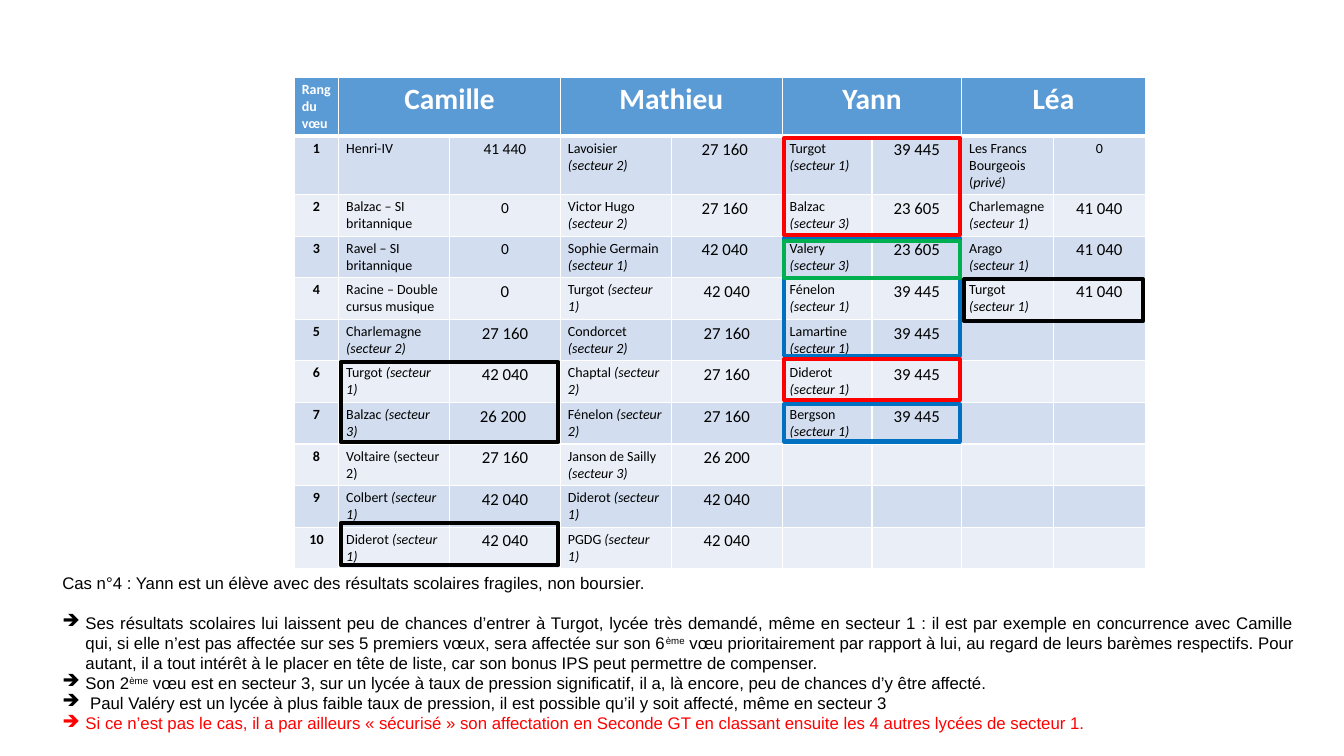
from itertools import accumulate

from pptx import Presentation
from pptx import util as u
from pptx.dml import color
from pptx.enum import shapes, text
from pptx.oxml import parse_xml
from pptx.oxml.ns import nsdecls

COLUMNS = [3.3] + [8.25] * 4 + [6.68] * 2 + [6.83] * 2
HEADER_ROW, ROW = 7.6, 5.47
TABLE_LEFT, TABLE_TOP = 21.9, 10.27
EDGES = list(accumulate(COLUMNS, initial=TABLE_LEFT))

NAMES = ["Camille", "Mathieu", "Yann", "Léa"]
WISHES = [
    ["Henri-IV", "41 440", "Lavoisier |(secteur 2)", "27 160 ", "Turgot |(secteur 1)", "39 445",
     "Les Francs Bourgeois (|privé)", "0"],
    ["Balzac – SI britannique", "0", "Victor Hugo| (secteur 2)", "27 160 ", "Balzac |(secteur 3)", "23 605",
     "Charlemagne |(secteur 1)", "41 040"],
    ["Ravel – SI britannique", "0", "Sophie Germain |(secteur 1)", "42 040 ", "Valery |(secteur 3)", "23 605",
     "Arago |(secteur 1)", "41 040"],
    ["Racine – Double cursus musique", "0", "Turgot |(secteur 1)", "42 040", "Fénelon |(secteur 1)", "39 445",
     "Turgot |(secteur 1)", "41 040"],
    ["Charlemagne |(secteur 2)", "27 160", "Condorcet |(secteur 2)", "27 160", "Lamartine |(secteur 1)", "39 445"],
    ["Turgot |(secteur 1)", "42 040", "Chaptal |(secteur 2)", "27 160", "Diderot |(secteur 1)", "39 445"],
    ["Balzac| (secteur 3)", "26 200 ", "Fénelon |(secteur 2)", "27 160", "Bergson |(secteur 1)", "39 445"],
    ["Voltaire (secteur 2)", "27 160", "Janson de Sailly |(secteur 3)", "26 200"],
    ["Colbert |(secteur 1)", "42 040", "Diderot |(secteur 1)", "42 040"],
    ["Diderot |(secteur 1)", "42 040", "PGDG |(secteur 1)", "42 040"],
]
SCORE_SIZES = {(1, 2): 11, (2, 2): 11, (3, 2): 11, (1, 8): 10}

FRAMES = [
    (5, 1.1, 2.85, "0070C0"),
    (5, -1.32, 2.34, "FF0000"),
    (5, 4.02, 1, "FF0000"),
    (5, 5.12, 0.9, "0070C0"),
    (5, 1.17, 0.9, "00B050"),
    (1, 4.1, 1.93, "000000"),
    (7, 2.1, 1, "000000"),
    (1, 8, 1, "000000"),
]

CASE = "Cas n°4 : Yann est un élève avec des résultats scolaires fragiles, non boursier."
POINTS = [
    "Ses résultats scolaires lui laissent peu de chances d’entrer à Turgot, lycée très demandé, même en secteur 1 : "
    "il est par exemple en concurrence avec Camille qui, si elle n’est pas affectée sur ses 5 premiers vœux, "
    "sera affectée sur son 6|ème| vœu prioritairement par rapport à lui, au regard de leurs barèmes respectifs. "
    "Pour autant, il a tout intérêt à le placer en tête de liste, car son bonus IPS peut permettre de compenser. ",
    "Son 2|ème| vœu est en secteur 3, sur un lycée à taux de pression significatif, il a, là encore, "
    "peu de chances d’y être affecté.",
    " Paul Valéry est un lycée à plus faible taux de pression, il est possible qu’il y soit affecté, "
    "même en secteur 3",
    "Si ce n’est pas le cas, il a par ailleurs « sécurisé » son affectation en Seconde GT "
    "en classant ensuite les 4 autres lycées de secteur 1.",
]


def rgb(value):
    return color.RGBColor.from_string(value)


class Sheet:
    table_font, body_font = "Calibri", "Arial"
    header_fill, band_fills = "5B9BD5", ("EAEFF7", "D2DEEF")

    def __init__(self, presentation):
        self.width, self.height = presentation.slide_width, presentation.slide_height
        self.slide = presentation.slides.add_slide(presentation.slide_layouts[6])

    def across(self, percent):
        return u.Emu(round(self.width * percent / 100))

    def down(self, percent):
        return u.Emu(round(self.height * percent / 100))

    def box(self, left, top, width, height):
        return self.across(left), self.down(top), self.across(width), self.down(height)

    def add_runs(self, paragraph, content, font, size, ink="000000", bold=False, raised=False):
        for line_number, line in enumerate(content.split("\n")):
            if line_number:
                paragraph.add_line_break()
            for index, part in enumerate(line.split("|")):
                run = paragraph.add_run()
                run.text = part
                run.font.name, run.font.size, run.font.bold = font, u.Pt(size), bold
                run.font.color.rgb = rgb(ink)
                if index % 2 and raised:
                    run.font._element.set("baseline", "30000")
                elif index % 2:
                    run.font.italic = True

    def borders(self, cell, bottom):
        properties = cell._tc.get_or_add_tcPr()
        for side, width in (("L", 1), ("R", 1), ("T", 1), ("B", bottom)):
            properties.append(parse_xml(
                f'<a:ln{side} {nsdecls("a")} w="{u.Pt(width)}"><a:solidFill>'
                f'<a:srgbClr val="FFFFFF"/></a:solidFill></a:ln{side}>'))

    def cell(self, cell, content, fill, size=10, ink="000000", bold=False, centred=True, bottom=1):
        self.borders(cell, bottom)
        cell.fill.solid()
        cell.fill.fore_color.rgb = rgb(fill)
        cell.margin_left = cell.margin_right = u.Pt(5.4)
        cell.margin_top = cell.margin_bottom = u.Pt(2.7)
        paragraph = cell.text_frame.paragraphs[0]
        if centred:
            paragraph.alignment = text.PP_ALIGN.CENTER
        if content:
            self.add_runs(paragraph, content, self.table_font, size, ink, bold)
        else:
            paragraph.font.size = u.Pt(size)

    def table(self):
        heights = [HEADER_ROW] * 2 + [ROW] * 9
        place = self.box(TABLE_LEFT, TABLE_TOP, sum(COLUMNS), sum(heights))
        table = self.slide.shapes.add_table(len(heights), len(COLUMNS), *place).table
        for column, width in zip(table.columns, COLUMNS):
            column.width = self.across(width)
        for row, height in zip(table.rows, heights):
            row.height = self.down(height)
        header = ["Rang\ndu vœu"] + [label for name in NAMES for label in (name, "")]
        for index, label in enumerate(header):
            self.cell(table.cell(0, index), label, self.header_fill, 21 if index else 10,
                      "FFFFFF", True, index > 0, 3)
        for index in range(1, len(COLUMNS), 2):
            table.cell(0, index).merge(table.cell(0, index + 1))
        for rank, wishes in enumerate(WISHES, 1):
            values = [str(rank)] + wishes + [""] * (8 - len(wishes))
            for index, value in enumerate(values):
                is_score = index > 0 and index % 2 == 0
                size = SCORE_SIZES.get((rank, index), 12) if is_score and value else 10
                self.cell(table.cell(rank, index), value, self.band_fills[rank % 2], size,
                          bold=index == 0, centred=index % 2 == 0)

    def frame(self, column, row, rows, ink):
        inset = 0.15
        left, right = EDGES[column] + inset, EDGES[column + 2] - inset
        top = TABLE_TOP + 2 * HEADER_ROW + row * ROW
        shape = self.slide.shapes.add_shape(
            shapes.MSO_SHAPE.RECTANGLE, *self.box(left, top, right - left, rows * ROW))
        shape.shadow.inherit = False
        shape.fill.background()
        shape.line.color.rgb = rgb(ink)
        shape.line.width = u.Pt(3)

    def comments(self):
        text_frame = self.slide.shapes.add_textbox(*self.box(3.9, 75.07, 93.17, 22.93)).text_frame
        text_frame.word_wrap = True
        paragraph = text_frame.paragraphs[0]
        paragraph.alignment = text.PP_ALIGN.JUSTIFY
        self.add_runs(paragraph, CASE, self.body_font, 12)
        for index, point in enumerate(POINTS):
            paragraph = text_frame.add_paragraph()
            properties = paragraph._p.get_or_add_pPr()
            properties.set("marL", str(u.Inches(0.23)))
            properties.set("indent", str(-u.Inches(0.23)))
            properties.append(parse_xml(f'<a:buChar {nsdecls("a")} char="➔"/>'))
            paragraph.alignment = text.PP_ALIGN.JUSTIFY
            if index == 0:
                paragraph.space_before = u.Pt(14)
            ink = "FF0000" if point == POINTS[-1] else "000000"
            self.add_runs(paragraph, point, self.body_font, 12, ink, raised=True)


def main():
    presentation = Presentation()
    presentation.slide_width, presentation.slide_height = u.Inches(13.33), u.Inches(7.5)
    sheet = Sheet(presentation)
    sheet.table()
    sheet.comments()
    for frame in FRAMES:
        sheet.frame(*frame)
    presentation.save("out.pptx")


if __name__ == "__main__":
    main()
